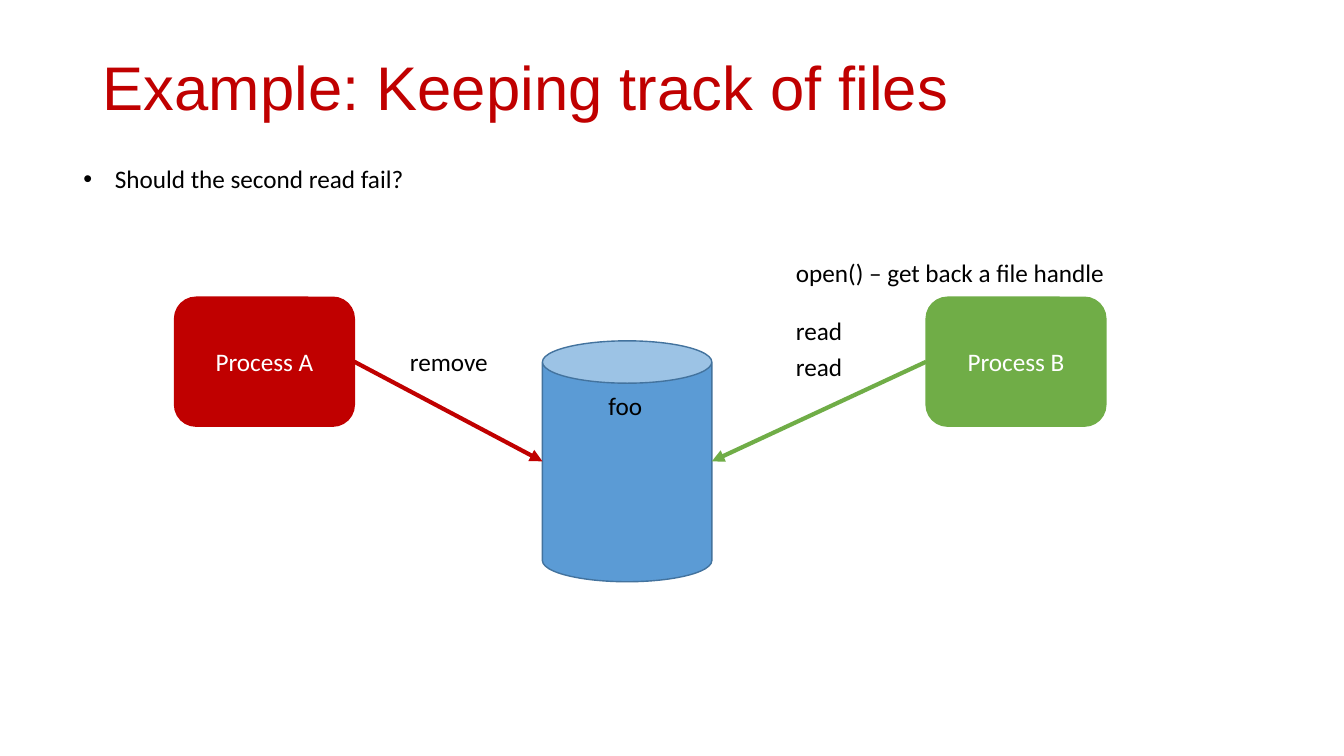
import dataclasses

import pptx
import pptx.dml.color
import pptx.enum.shapes
import pptx.enum.text
import pptx.oxml
import pptx.oxml.ns
import pptx.util
from pptx.util import Cm

SHAPE = pptx.enum.shapes.MSO_SHAPE
ALIGN = pptx.enum.text.PP_ALIGN
ANCHOR = pptx.enum.text.MSO_ANCHOR
AUTO_SIZE = pptx.enum.text.MSO_AUTO_SIZE


@dataclasses.dataclass(frozen=True)
class Theme:
    red: str = "C00000"
    green: str = "70AD47"
    blue: str = "5B9BD5"
    blue_edge: str = "43739E"
    black: str = "000000"
    white: str = "FFFFFF"
    title_font: str = "Arial"
    body_font: str = "Calibri"
    title_size: int = 44
    body_size: int = 18
    edge_width: int = 1
    arrow_width: int = 3


THEME = Theme()


def rgb(color):
    return pptx.dml.color.RGBColor.from_string(color)


def write(tf, text, color=THEME.black, size=THEME.body_size,
          font=THEME.body_font, align=ALIGN.LEFT):
    tf.text = text
    tf.word_wrap = True
    p = tf.paragraphs[0]
    p.alignment = align
    r = p.runs[0]
    r.font.name = font
    r.font.size = pptx.util.Pt(size)
    r.font.color.rgb = rgb(color)
    return p


def place(sp, left, top, width, height):
    sp.left, sp.top, sp.width, sp.height = (
        Cm(left), Cm(top), Cm(width), Cm(height))


def set_title(s, text):
    sp = s.shapes.title
    place(sp, 2.34, 0.43, 29.21, 3.68)
    tf = sp.text_frame
    tf.auto_size = AUTO_SIZE.NONE
    tf.vertical_anchor = ANCHOR.MIDDLE
    p = write(tf, text, THEME.red, THEME.title_size, THEME.title_font)
    p.line_spacing = 0.9


def set_question(s, text):
    sp = s.placeholders[1]
    place(sp, 1.85, 3.99, 10.9, 1.02)
    tf = sp.text_frame
    tf.auto_size = AUTO_SIZE.NONE
    tf.vertical_anchor = ANCHOR.TOP
    p = write(tf, text)
    p.space_before = pptx.util.Pt(0)
    pPr = p._p.get_or_add_pPr()
    pPr.set("marL", str(Cm(0.79)))
    pPr.set("indent", str(Cm(-0.79)))
    ns = pptx.oxml.ns.nsdecls("a")
    pPr.append(pptx.oxml.parse_xml(f'<a:buFont {ns} typeface="Arial"/>'))
    pPr.append(pptx.oxml.parse_xml(f'<a:buChar {ns} char="•"/>'))


def add_label(shapes, text, left, top, width=2.82, align=ALIGN.LEFT):
    sp = shapes.add_textbox(Cm(left), Cm(top), Cm(width), Cm(1.02))
    write(sp.text_frame, text, align=align)


def add_block(shapes, kind, left, top, width, height, fill, edge):
    sp = shapes.add_shape(kind, Cm(left), Cm(top), Cm(width), Cm(height))
    sp.shadow.inherit = False
    sp.fill.solid()
    sp.fill.fore_color.rgb = rgb(fill)
    sp.line.color.rgb = rgb(edge)
    sp.line.width = pptx.util.Pt(THEME.edge_width)
    return sp


def add_file(s, name):
    group = s.shapes.add_group_shape()
    can = add_block(group.shapes, SHAPE.CAN, 13.67, 8.59, 4.27, 6.07,
                    THEME.blue, THEME.blue_edge)
    add_label(group.shapes, name, 14.73, 9.7, 2.06, ALIGN.CENTER)
    return can


def add_arrow(shapes, box, side, x, y, color):
    cxn = shapes.add_connector(pptx.enum.shapes.MSO_CONNECTOR.STRAIGHT,
                               box.left, box.top, x, y)
    cxn.begin_connect(box, side)
    cxn.line.color.rgb = rgb(color)
    cxn.line.width = pptx.util.Pt(THEME.arrow_width)
    ns = pptx.oxml.ns.nsdecls("a")
    cxn.line._get_or_add_ln().append(
        pptx.oxml.parse_xml(f'<a:tailEnd {ns} type="triangle"/>'))
    cxn._element.spPr.append(pptx.oxml.parse_xml(f"<a:effectLst {ns}/>"))


def add_process(s, name, left, color, side, can):
    group = s.shapes.add_group_shape()
    box = add_block(group.shapes, SHAPE.ROUNDED_RECTANGLE,
                    left, 7.49, 4.53, 3.25, color, color)
    box.text_frame.vertical_anchor = ANCHOR.MIDDLE
    write(box.text_frame, name, THEME.white, align=ALIGN.CENTER)
    x = can.left if side == 3 else can.left + can.width
    y = can.top + can.height // 2
    add_arrow(group.shapes, box, side, x, y, color)


def main():
    prs = pptx.Presentation()
    prs.slide_width, prs.slide_height = Cm(33.87), Cm(19.05)
    s = prs.slides.add_slide(prs.slide_layouts[1])
    set_title(s, "Example: Keeping track of files")
    set_question(s, "Should the second read fail?")
    can = add_file(s, "foo")
    add_process(s, "Process A", 4.4, THEME.red, 3, can)
    add_process(s, "Process B", 23.34, THEME.green, 1, can)
    add_label(s.shapes, "remove", 10.08, 8.59)
    add_label(s.shapes, "open() – get back a file handle", 19.81, 6.35, 9.37)
    for top in (7.82, 8.74):
        add_label(s.shapes, "read", 19.81, top)
    prs.save("out.pptx")


if __name__ == "__main__":
    main()
